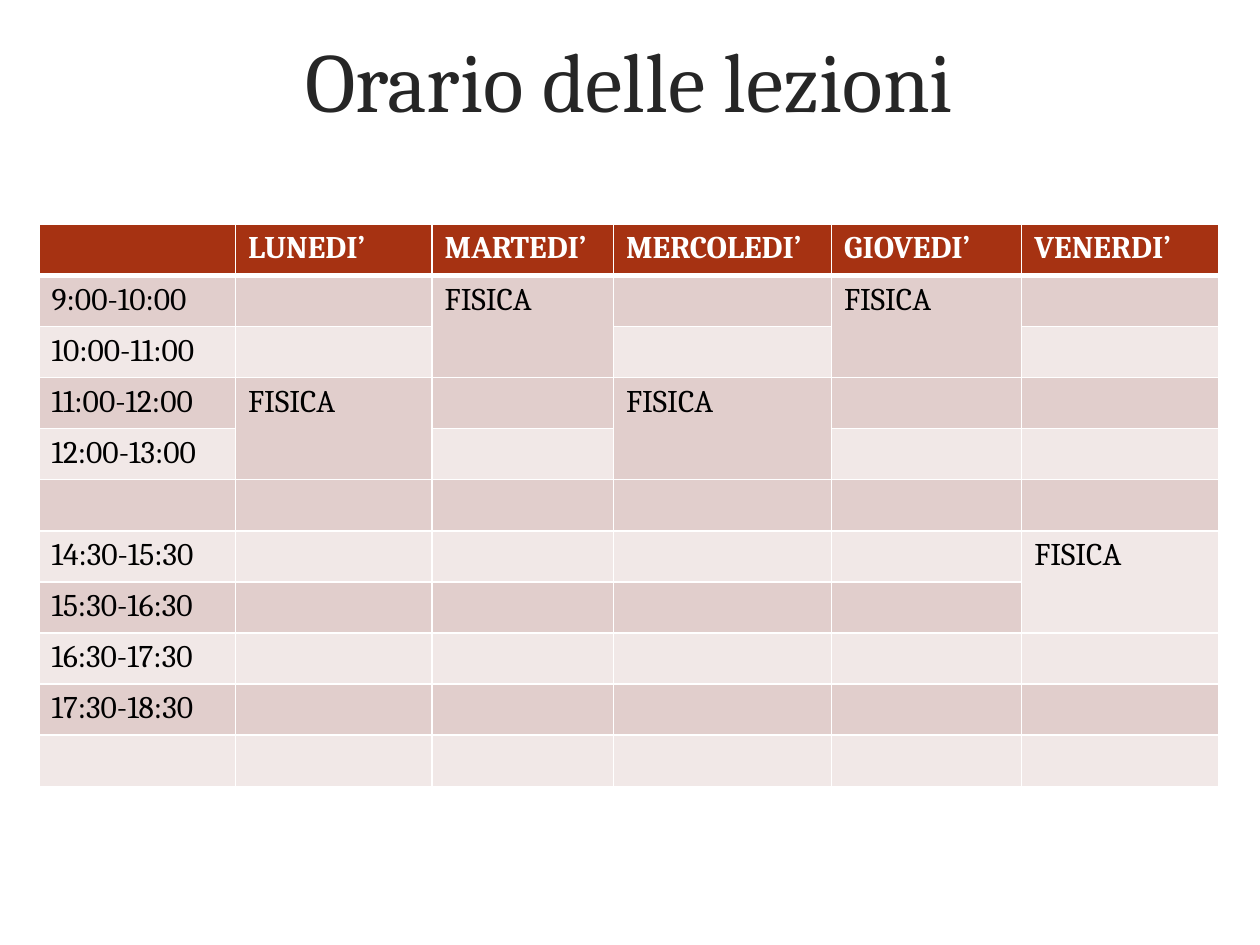
from lxml import etree
from pptx import Presentation
from pptx.dml.color import RGBColor
from pptx.enum.text import MSO_ANCHOR, PP_ALIGN
from pptx.oxml.ns import qn
from pptx.util import Inches, Pt

CENTER, MIDDLE = PP_ALIGN.CENTER, MSO_ANCHOR.MIDDLE
TITLE_ONLY = 5

WHITE = RGBColor(0xFF, 0xFF, 0xFF)
BLACK = RGBColor(0x00, 0x00, 0x00)
CHARCOAL = RGBColor(0x26, 0x26, 0x26)
RUST = RGBColor(0xA6, 0x32, 0x12)
ROSE = RGBColor(0xE1, 0xCE, 0xCC)
PALE_ROSE = RGBColor(0xF1, 0xE8, 0xE7)

DAYS = ["LUNEDI’", "MARTEDI’", "MERCOLEDI’", "GIOVEDI’", "VENERDI’"]
HOURS = ["9:00-10:00", "10:00-11:00", "11:00-12:00", "12:00-13:00", "",
         "14:30-15:30", "15:30-16:30", "16:30-17:30", "17:30-18:30", ""]
LESSON = "FISICA"
LESSON_STARTS = [(1, 2), (1, 4), (3, 1), (3, 3), (6, 5)]  # row, column
LESSON_ROWS = 2
COLUMN_WIDTHS = [1.56, 1.56, 1.44, 1.73, 1.51, 1.56]


class SlideBuilder:
    title_format = {"name": "Cambria", "size": Pt(48), "bold": False}
    header_format = {"name": "Cambria", "size": Pt(18), "bold": True}
    body_format = {"name": "Cambria", "size": Pt(18), "bold": False}

    def __init__(self, slide):
        self.slide = slide

    def add_text(self, frame, text, font_format, color):
        para = frame.paragraphs[0]
        span = para.add_run()
        span.text = text
        for name, value in font_format.items():
            setattr(span.font, name, value)
        span.font.color.rgb = color
        return para

    def title(self, text, left, top, width, height):
        box = self.slide.shapes.title
        place = {"left": left, "top": top, "width": width, "height": height}
        for name, value in place.items():
            setattr(box, name, Inches(value))
        box.text_frame.vertical_anchor = MIDDLE
        para = self.add_text(box.text_frame, text, self.title_format, CHARCOAL)
        para.alignment = CENTER

    def borders(self, cell, points):
        """Draw white borders; points maps each side (L, R, T, B) to a width."""
        properties = cell._tc.get_or_add_tcPr()
        for side, width in points.items():
            line = etree.SubElement(properties, qn(f"a:ln{side}"), w=str(Pt(width)))
            fill = etree.SubElement(line, qn("a:solidFill"))
            etree.SubElement(fill, qn("a:srgbClr"), val=str(WHITE))

    def table(self, rows, left, top, widths, height):
        grid = self.slide.shapes.add_table(
            len(rows), len(widths), Inches(left), Inches(top),
            Inches(sum(widths)), Inches(height)).table
        for column, width in zip(grid.columns, widths):
            column.width = Inches(width)
        for r, texts in enumerate(rows):
            is_header = r == 0
            band = RUST if is_header else ROSE if r % 2 else PALE_ROSE
            sides = {"L": 1, "R": 1, "T": 3 if r == 1 else 1, "B": 3 if is_header else 1}
            for c, text in enumerate(texts):
                cell = grid.cell(r, c)
                self.borders(cell, sides)
                cell.fill.solid()
                cell.fill.fore_color.rgb = band
                if text:
                    self.add_text(cell.text_frame, text,
                                  self.header_format if is_header else self.body_format,
                                  WHITE if is_header else BLACK)
        return grid


def main():
    deck = Presentation()
    deck.slide_width, deck.slide_height = Inches(10), Inches(7.5)
    page = SlideBuilder(deck.slides.add_slide(deck.slide_layouts[TITLE_ONLY]))
    page.title("Orario delle lezioni", 0.6, 0.13, 8.79, 0.99)

    rows = [["", *DAYS]] + [[hour] + [""] * len(DAYS) for hour in HOURS]
    for row, column in LESSON_STARTS:
        rows[row][column] = LESSON
    timetable = page.table(rows, 0.31, 1.78, COLUMN_WIDTHS, 4.46)
    for row, column in LESSON_STARTS:
        last = timetable.cell(row + LESSON_ROWS - 1, column)
        timetable.cell(row, column).merge(last)

    deck.save("out.pptx")


if __name__ == "__main__":
    main()
